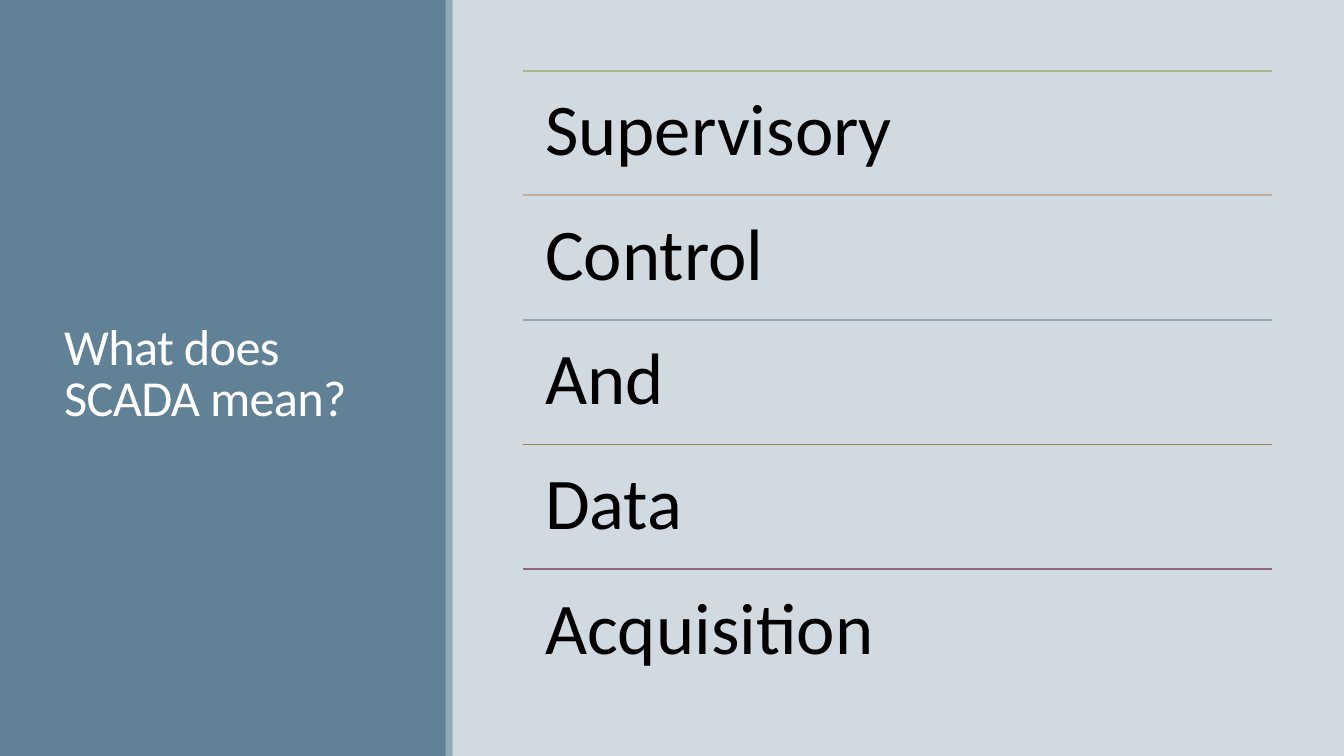
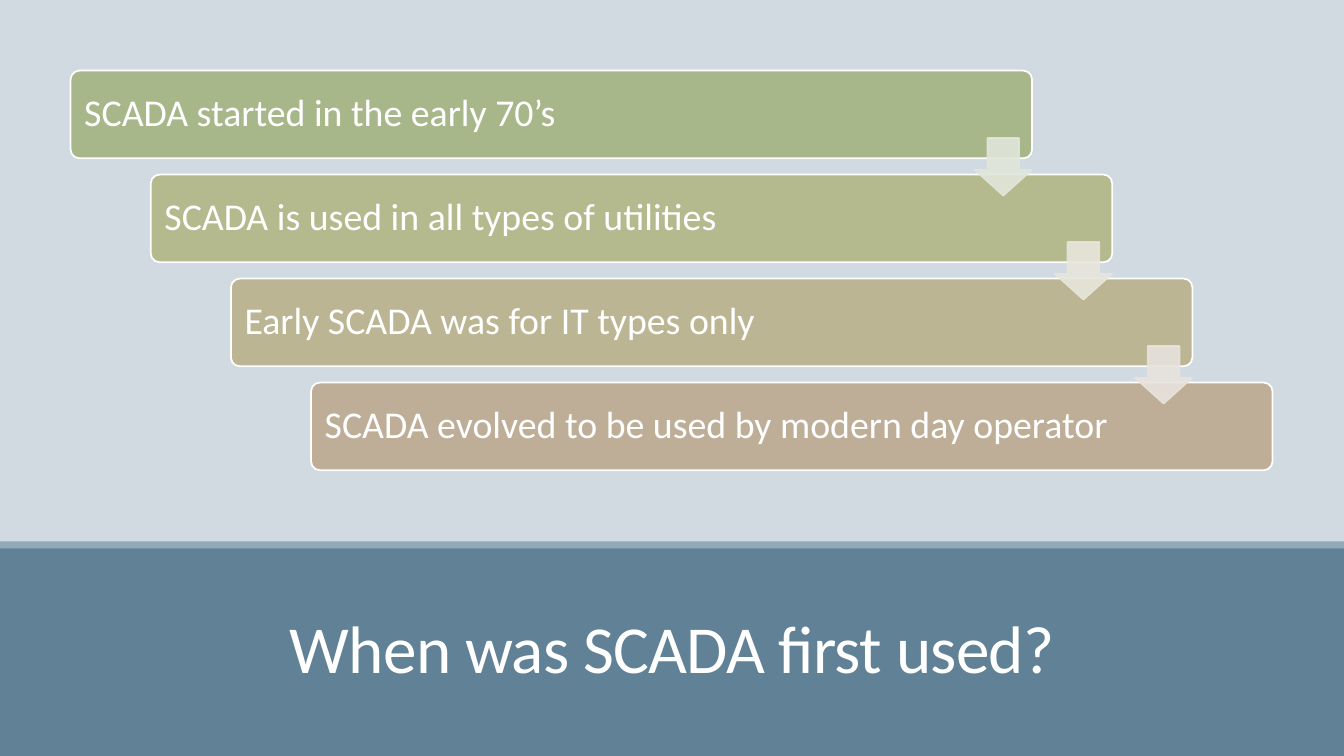
from lxml.etree import SubElement
from pptx import Presentation
from pptx.dml.color import RGBColor
from pptx.enum.shapes import MSO_CONNECTOR, MSO_SHAPE
from pptx.enum.text import MSO_ANCHOR, PP_ALIGN
from pptx.oxml.ns import qn
from pptx.util import Cm, Pt

COLORS = {
    "background": "D1D9E1",
    "band": "618197",
    "strip": "92A9B9",
    "white": "FFFFFF",
    "black": "000000",
    "green": "A7B789",
    "olive": "B5B98E",
    "khaki": "BCB593",
    "tan": "BEAE98",
    "brown": "9C8265",
    "plum": "8D6974",
    "pale green": "E1E6DA",
    "pale olive": "E7E6DC",
    "pale khaki": "E8E3DD",
}
FONT = "Calibri"
PAGE_WIDTH, PAGE_HEIGHT = 33.87, 19.05
STRIP_SIZE = 0.18
LINE_WIDTH = Pt(1.25)


def color(name):
    return RGBColor.from_string(COLORS[name])


class SlideBuilder:
    """Holds the deck, its style and the current slide; lengths are in cm."""

    def __init__(self):
        self.deck = Presentation()
        self.deck.slide_width = Cm(PAGE_WIDTH)
        self.deck.slide_height = Cm(PAGE_HEIGHT)
        self.page = None

    def new_page(self):
        self.page = self.deck.slides.add_slide(self.deck.slide_layouts[6])
        fill = self.page.background.fill
        fill.solid()
        fill.fore_color.rgb = color("background")

    def shape(self, kind, place, fill, line=None, adjustments=(), opacity=None):
        shape = self.page.shapes.add_shape(kind, *map(Cm, place))
        shape.shadow.inherit = False
        for index, value in enumerate(adjustments):
            shape.adjustments[index] = value
        shape.fill.solid()
        shape.fill.fore_color.rgb = color(fill)
        if line:
            shape.line.color.rgb = color(line)
            shape.line.width = LINE_WIDTH
        else:
            shape.line.fill.background()
        if opacity:
            for tint in list(shape.element.spPr.iter(qn("a:srgbClr"))):
                SubElement(tint, qn("a:alpha"), val=str(opacity * 1000))
        return shape

    def set_text(self, box, text, size, font_color, margins, anchor,
                 spacing=0.9, align=PP_ALIGN.LEFT, tracking=None):
        frame = box.text_frame
        frame.text = text
        frame.word_wrap = True
        frame.vertical_anchor = anchor
        frame.margin_left = frame.margin_right = Cm(margins[0])
        frame.margin_top = frame.margin_bottom = Cm(margins[1])
        para = frame.paragraphs[0]
        para.alignment = align
        para.line_spacing = spacing
        span = para.runs[0]
        span.font.name = FONT
        span.font.size = Pt(size)
        span.font.color.rgb = color(font_color)
        if tracking:
            for properties in box.element.iter(qn("a:rPr")):
                properties.set("spc", str(tracking))

    def text(self, place, text, size, font_color, margins, anchor, **style):
        box = self.page.shapes.add_textbox(*map(Cm, place))
        self.set_text(box, text, size, font_color, margins, anchor, **style)

    def title(self, place, text, size, anchor, align=PP_ALIGN.LEFT):
        self.text(place, text, size, "white", (0.25, 0.13), anchor,
                  spacing=0.85, align=align, tracking=-50)

    def band(self, place, strip_place):
        self.shape(MSO_SHAPE.RECTANGLE, place, "band")
        self.shape(MSO_SHAPE.RECTANGLE, strip_place, "strip")

    def rule(self, left, top, width, line_color):
        rule = self.page.shapes.add_connector(
            MSO_CONNECTOR.STRAIGHT, Cm(left), Cm(top), Cm(left + width), Cm(top))
        rule.line.color.rgb = color(line_color)
        rule.line.width = LINE_WIDTH
        SubElement(rule.element.spPr, qn("a:effectLst"))

    def step(self, place, text, fill):
        box = self.shape(MSO_SHAPE.ROUNDED_RECTANGLE, place, fill, "white", [0.1])
        self.set_text(box, text, 27, "white", (0.28, 0.28), MSO_ANCHOR.MIDDLE)

    def arrow(self, left, top, size, fill):
        self.shape(MSO_SHAPE.DOWN_ARROW, (left, top, size, size), fill, fill,
                   [0.55, 0.45], opacity=90)


def build_meaning(builder):
    builder.new_page()

    # Side band with title
    builder.band((0, 0, 11.25, PAGE_HEIGHT), (11.23, 0, STRIP_SIZE, PAGE_HEIGHT))
    builder.title((1.37, 1.45, 8.56, 16.03), "What does SCADA mean?", 36,
                  MSO_ANCHOR.MIDDLE)

    # Ruled list of words
    left, first_top, width, row_height = 13.18, 1.78, 18.87, 3.14
    words = [("Supervisory", "green"), ("Control", "tan"), ("And", "strip"),
             ("Data", "brown"), ("Acquisition", "plum")]
    for index, (word, line_color) in enumerate(words):
        top = first_top + index * row_height
        builder.rule(left, top, width, line_color)
        builder.text((left, top, width, row_height), word, 52, "black",
                     (0.56, 0.56), MSO_ANCHOR.TOP)


def build_history(builder):
    builder.new_page()

    # Bottom band with title
    builder.band((0, 13.77, PAGE_WIDTH, PAGE_HEIGHT - 13.77),
                 (0, 13.64, PAGE_WIDTH, STRIP_SIZE))
    builder.title((2.97, 14.58, 27.94, 2.87), "When was SCADA first used?", 48,
                  MSO_ANCHOR.BOTTOM, PP_ALIGN.CENTER)

    # Staircase of steps
    start, shift, drop = 1.78, 2.02, 2.62
    steps = [("SCADA started in the early 70’s", "green"),
             ("SCADA is used in all types of utilities", "olive"),
             ("Early SCADA was for IT types only", "khaki"),
             ("SCADA evolved to be used by modern day operator", "tan")]
    for index, (text, fill) in enumerate(steps):
        builder.step((start + index * shift, start + index * drop, 24.23, 2.21),
                     text, fill)

    # Arrows from each step to the next
    for index, fill in enumerate(["pale green", "pale olive", "pale khaki"]):
        builder.arrow(24.56 + index * shift, 3.48 + index * drop, 1.45, fill)


def main():
    builder = SlideBuilder()
    build_meaning(builder)
    build_history(builder)
    builder.deck.save("out.pptx")


if __name__ == "__main__":
    main()
